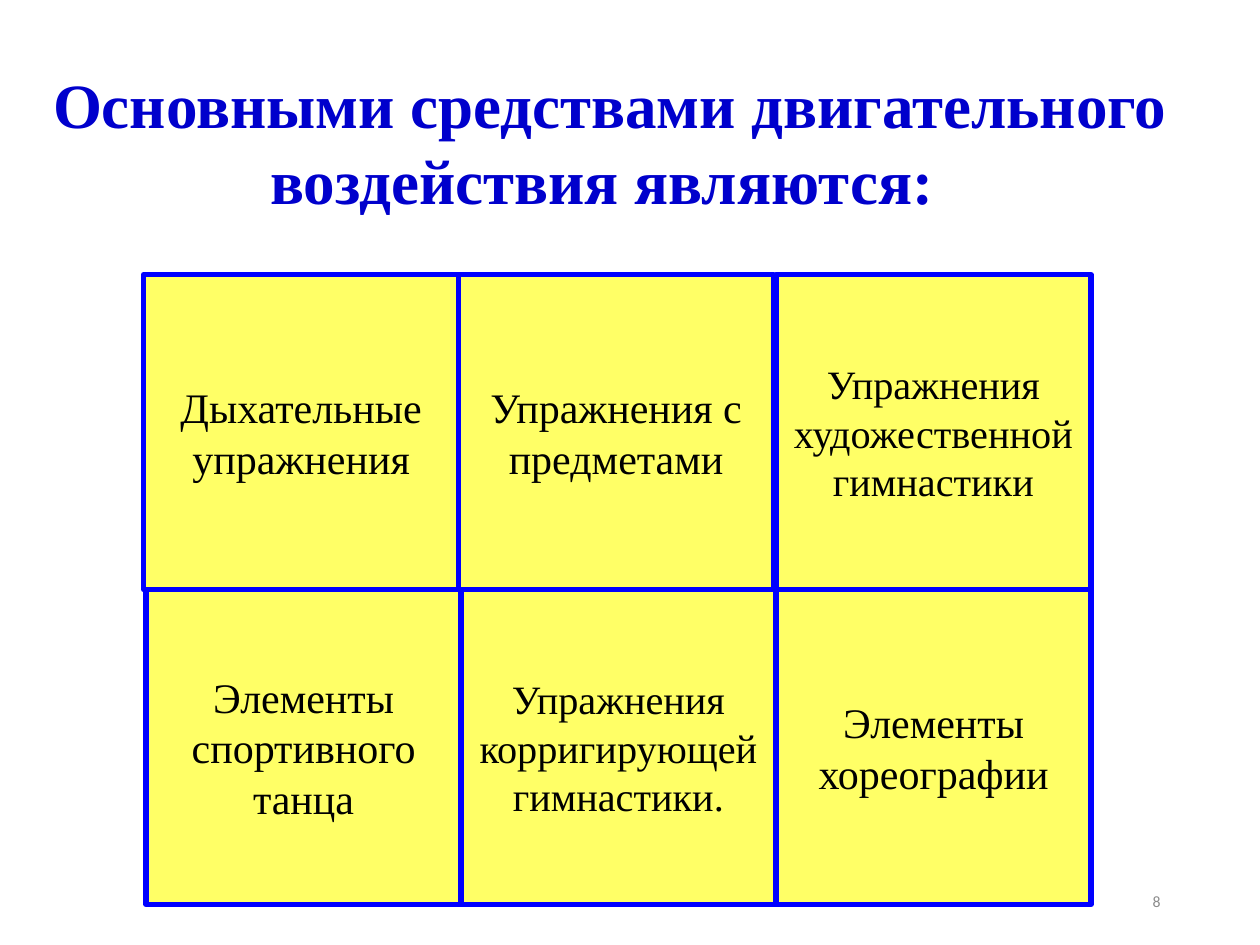
from pptx import Presentation
from pptx.dml.color import RGBColor
from pptx.enum.shapes import MSO_SHAPE as Shape
from pptx.enum.text import MSO_ANCHOR as Anchor, MSO_AUTO_SIZE as AutoSize, PP_ALIGN as Align
from pptx.util import Pt

PX = 9144  # EMU per px, 100 px to the inch
COLORS = {"title": "0000CC", "card": "FFFF66", "border": "0000FF",
          "text": "000000", "number": "8C8C8C"}
SERIF = "Times New Roman"
CARD_SIZE = 250
# Each row: top, left edges, and (text, font size) for its cards
ROWS = [
    (218, (114, 364, 616), [("Дыхательные упражнения", 24),
                            ("Упражнения с предметами", 24),
                            ("Упражнения художественной гимнастики", 23)]),
    (468, (116, 366, 616), [("Элементы спортивного танца", 24),
                            ("Упражнения корригирующей гимнастики.", 23),
                            ("Элементы хореографии", 24)]),
]


def px(*lengths):
    return [length * PX for length in lengths]


def color(name):
    return RGBColor.from_string(COLORS[name])


def write(frame, text, size, color_name, font=SERIF, align=Align.CENTER,
          anchor=Anchor.MIDDLE, bold=False):
    frame.word_wrap = True
    frame.vertical_anchor = anchor
    frame.text = text
    paragraph = frame.paragraphs[0]
    paragraph.alignment = align
    paragraph.font.name = font
    paragraph.font.size = Pt(size)
    paragraph.font.bold = bold
    paragraph.font.color.rgb = color(color_name)


def add_title(slide, text):
    title = slide.shapes.title
    title.left, title.top, title.width, title.height = px(23, 47, 922, 131)
    write(title.text_frame, text, 36, "title", anchor=Anchor.TOP, bold=True)
    title.text_frame.auto_size = AutoSize.NONE


def add_card(slide, left, top, text, size):
    card = slide.shapes.add_shape(
        Shape.RECTANGLE, *px(left, top, CARD_SIZE, CARD_SIZE))
    card.shadow.inherit = False
    card.fill.solid()
    card.fill.fore_color.rgb = color("card")
    card.line.color.rgb = color("border")
    card.line.width = Pt(3)
    write(card.text_frame, text, size, "text")


def add_slide_number(slide, number):
    box = slide.shapes.add_textbox(*px(706, 695, 225, 40))
    write(box.text_frame, number, 9, "number", font="Calibri", align=Align.RIGHT)


def main():
    deck = Presentation()
    deck.slide_width, deck.slide_height = px(1000, 750)
    slide = deck.slides.add_slide(deck.slide_layouts[5])

    # Heading
    add_title(slide, "Основными средствами двигательного воздействия являются: ")

    # Grid of exercise types
    for top, lefts, exercises in ROWS:
        for left, (text, size) in zip(lefts, exercises):
            add_card(slide, left, top, text, size)

    # Footer
    add_slide_number(slide, "8")
    deck.save("out.pptx")


if __name__ == "__main__":
    main()
